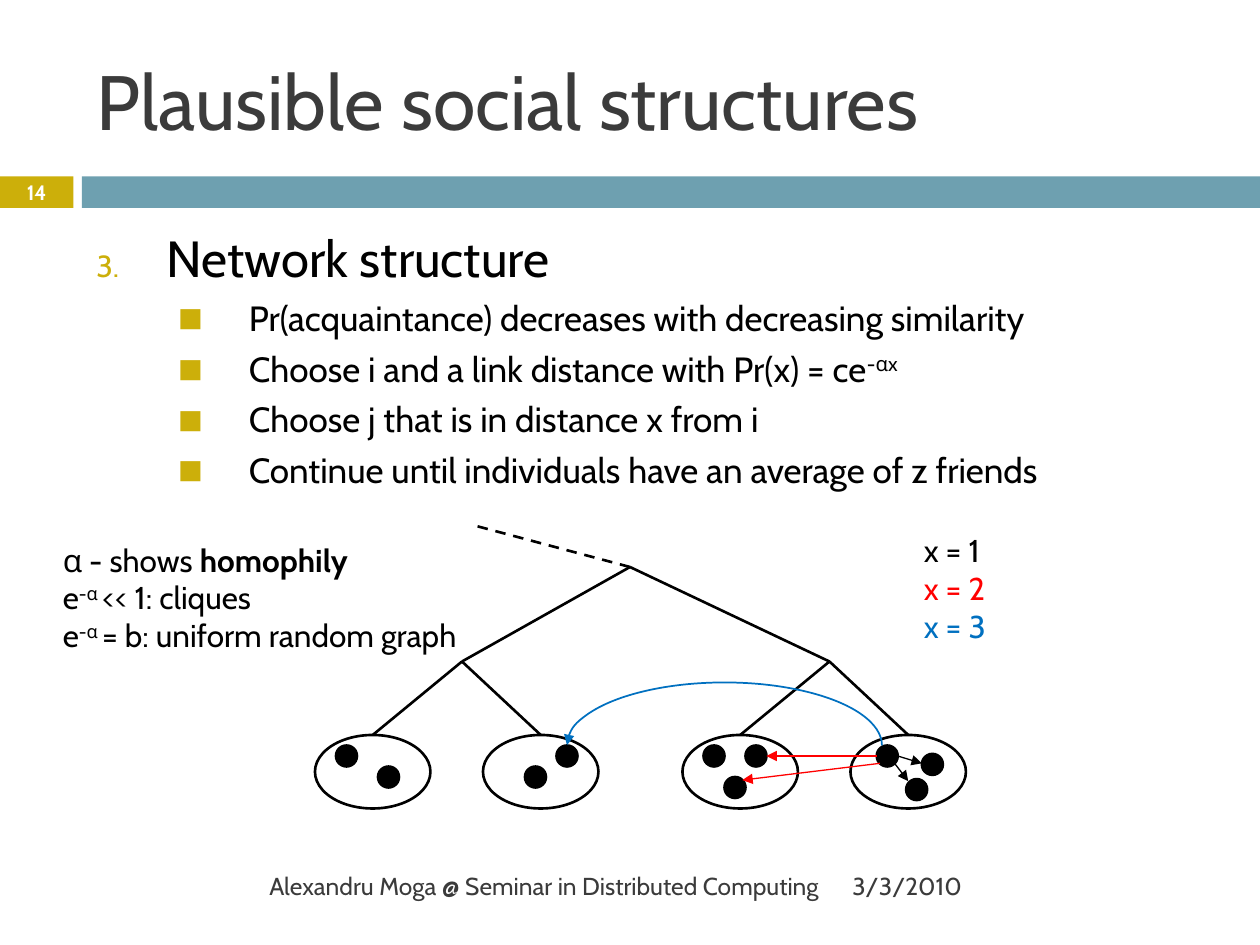
from dataclasses import dataclass

from lxml.etree import SubElement
from pptx import Presentation
from pptx.dml.color import RGBColor
from pptx.enum.dml import MSO_LINE
from pptx.enum.shapes import MSO_CONNECTOR, MSO_SHAPE
from pptx.enum.text import MSO_ANCHOR, MSO_AUTO_SIZE, PP_ALIGN
from pptx.oxml.ns import qn
from pptx.util import Inches, Pt

CELL = 1 / 12  # inches; the slide is 120 columns by 90 rows


@dataclass(frozen=True)
class Theme:
    font: str = "Cabin"
    ink: str = "000000"
    grey: str = "3B3B3B"
    gold: str = "CCAF0A"
    teal: str = "6EA0B0"
    white: str = "FFFFFF"
    red: str = "FF0000"
    blue: str = "0070C0"
    title: float = 44
    heading: float = 29
    item: float = 20
    note: float = 18
    footer: float = 14
    number: float = 11.9


def grid(*cells):
    return [Inches(cell * CELL) for cell in cells]


def rgb(color):
    return RGBColor.from_string(color)


class SlideBuilder:
    def __init__(self, deck, theme):
        self.theme = theme
        self.page = deck.slides.add_slide(deck.slide_layouts[5])

    def style(self, para, size, color, bold=None):
        para.font.name, para.font.size, para.font.bold = self.theme.font, Pt(size), bold
        para.font.color.rgb = rgb(color)

    def title(self, text, *cells):
        box = self.page.shapes.title
        box.left, box.top, box.width, box.height = grid(*cells)
        frame = box.text_frame
        frame.text = text
        frame.auto_size = MSO_AUTO_SIZE.NONE
        frame.vertical_anchor = MSO_ANCHOR.MIDDLE
        frame.paragraphs[0].alignment = PP_ALIGN.LEFT
        self.style(frame.paragraphs[0], self.theme.title, self.theme.grey)

    def text_box(self, *cells, anchor=MSO_ANCHOR.TOP):
        frame = self.page.shapes.add_textbox(*grid(*cells)).text_frame
        frame.word_wrap = True
        frame.vertical_anchor = anchor
        return frame

    def label(self, text, *cells, size, color, align=PP_ALIGN.LEFT, bold=None):
        para = self.text_box(*cells, anchor=MSO_ANCHOR.MIDDLE).paragraphs[0]
        para.text, para.alignment = text, align
        self.style(para, size, color, bold)

    def paragraph(self, frame, text, size, color, margin=0.71, before=0):
        """Add a hanging paragraph; in text, ^..^ is superscript and *..* is bold."""
        first = frame.paragraphs[0]
        para = frame.add_paragraph() if first.runs else first
        para.space_before = Pt(before)
        properties = para._p.get_or_add_pPr()
        properties.set("marL", str(Inches(margin)))
        properties.set("indent", str(Inches(-0.56)))
        mark = "^" if "^" in text else "*"
        for index, part in enumerate(text.split(mark)):
            if not part:
                continue
            span = para.add_run()
            span.text = part
            if index % 2 and mark == "^":
                span._r.get_or_add_rPr().set("baseline", "30000")
            elif index % 2:
                span.font.bold = True
        self.style(para, size, color)
        return para

    def bullet(self, para, percent, kind, **settings):
        properties = para._p.get_or_add_pPr()
        defaults = properties.find(qn("a:defRPr"))
        color = SubElement(properties, qn("a:buClr"))
        SubElement(color, qn("a:srgbClr"), val=self.theme.gold)
        SubElement(properties, qn("a:buSzPct"), val=str(percent * 1000))
        SubElement(properties, qn("a:buFont"), typeface=self.theme.font)
        SubElement(properties, qn(kind), **settings)
        properties.append(defaults)  # the schema wants the font after the bullet

    def shape(self, preset, *cells, fill=None, line=None, weight=1.5):
        shape = self.page.shapes.add_shape(preset, *grid(*cells))
        shape.shadow.inherit = False
        if fill:
            shape.fill.solid()
            shape.fill.fore_color.rgb = rgb(fill)
        else:
            shape.fill.background()
        if line:
            shape.line.color.rgb = rgb(line)
            shape.line.width = Pt(weight)
        else:
            shape.line.fill.background()
        return shape

    def oval(self, *cells, fill):
        return self.shape(MSO_SHAPE.OVAL, *cells, fill=fill, line=self.theme.ink)

    def line(self, start, end, color, weight=1.5, dashed=False, arrow=False):
        line = self.page.shapes.add_connector(MSO_CONNECTOR.STRAIGHT, *grid(*start, *end))
        line.line.color.rgb = rgb(color)
        line.line.width = Pt(weight)
        if dashed:
            line.line.dash_style = MSO_LINE.DASH
        if arrow:
            self.arrowhead(line, "a:tailEnd")
        SubElement(line._element.spPr, qn("a:effectLst"))
        return line

    def arrowhead(self, shape, end):
        SubElement(shape.line._get_or_add_ln(), qn(end), type="triangle")

    def arc_arrow(self, *cells, color):
        arc = self.shape(MSO_SHAPE.ARC, *cells, line=color, weight=1)
        arc.adjustments[0], arc.adjustments[1] = 108.06, 0
        self.arrowhead(arc, "a:headEnd")


def draw_frame(slide, theme):
    slide.shape(MSO_SHAPE.RECTANGLE, 0, 16.8, 7, 3, fill=theme.gold)
    slide.shape(MSO_SHAPE.RECTANGLE, 7.8, 16.8, 112.2, 3, fill=theme.teal)
    slide.title("Plausible social structures", 8, 3, 107, 13)
    slide.label("3/3/2010", 80, 82, 35, 4.8, size=theme.footer, color=theme.grey)
    slide.label("Alexandru Moga @ Seminar in Distributed Computing", 8, 82, 71.2, 4.8,
                size=theme.footer, color=theme.grey, align=PP_ALIGN.RIGHT)
    slide.label("14", 0, 16.7, 7, 3.2, size=theme.number, color=theme.white,
                align=PP_ALIGN.CENTER, bold=True)


def draw_text(slide, theme):
    body = slide.text_box(8, 21, 107, 25)
    heading = slide.paragraph(body, "Network structure", theme.heading, theme.ink, 0.56, 7)
    slide.bullet(heading, 60, "a:buAutoNum", type="arabicPeriod", startAt="3")
    for text in ("Pr(acquaintance) decreases with decreasing similarity",
                 "Choose i and a link distance with Pr(x) = ce^-αx^",
                 "Choose j that is in distance x from i",
                 "Continue until individuals have an average of z friends"):
        item = slide.paragraph(body, text, theme.item, theme.ink, 1.21, 5)
        slide.bullet(item, 75, "a:buChar", char="■")
    notes = slide.text_box(3, 50.9, 60, 12.1)
    for text in ("α - shows *homophily*", "e^-α ^<< 1: cliques", "e^-α ^= b: uniform random graph"):
        slide.paragraph(notes, text, theme.note, theme.ink)
    legend = slide.text_box(85, 50, 13, 12.1)
    for distance, color in enumerate((theme.ink, theme.red, theme.blue), start=1):
        slide.paragraph(legend, f"x = {distance}", theme.note, color)


def draw_tree(slide, theme):
    root = (60, 54)
    for parent, group_columns in (((44, 63), (30, 46)), ((79, 63), (65, 81))):
        for column in group_columns:
            group = slide.oval(column, 70, 11, 7, fill=theme.white)
            branch = slide.line((column + 5.5, 70), parent, theme.ink)
            branch.begin_connect(group, 0)
        slide.line(parent, root, theme.ink)
    slide.line(root, (45, 50), theme.ink, dashed=True)
    for column, row in ((32, 71), (36, 73), (50, 73), (53, 71), (67, 71), (71, 71),
                        (69, 74), (83.5, 71), (87.8, 71.8), (86.3, 74.2)):
        slide.oval(column, row, 2, 2, fill=theme.ink)
    for start, end, color in (((85.5, 72), (87.8, 72.7), theme.ink),
                              ((85.2, 72.7), (86.5, 74.4), theme.ink),
                              ((83.5, 72), (73, 72), theme.red),
                              ((83.8, 72.7), (70.7, 74.3), theme.red)):
        slide.line(start, end, color, weight=0.75, arrow=True)
    slide.arc_arrow(54, 65, 30, 12, color=theme.blue)


def main():
    deck = Presentation()
    deck.slide_width, deck.slide_height = grid(120, 90)
    theme = Theme()
    slide = SlideBuilder(deck, theme)
    draw_frame(slide, theme)
    draw_text(slide, theme)
    draw_tree(slide, theme)
    deck.save("out.pptx")


if __name__ == "__main__":
    main()
